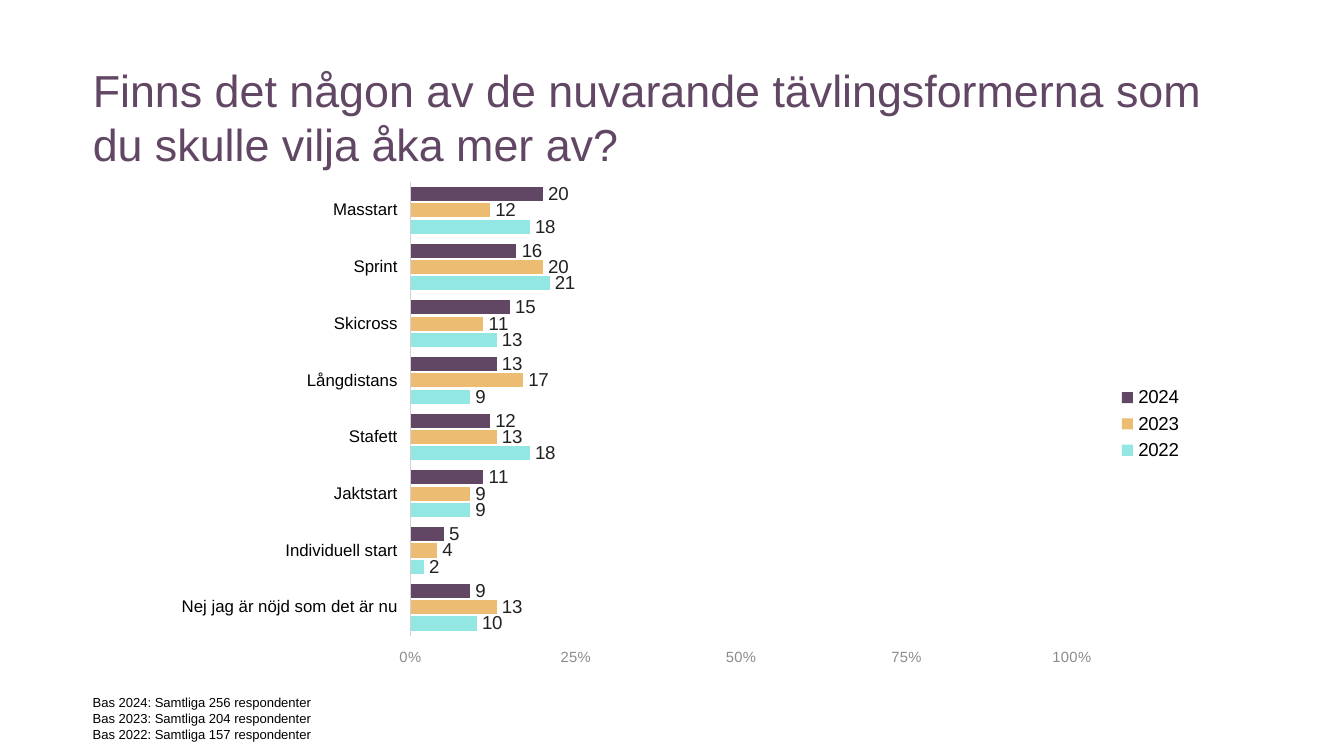
from dataclasses import dataclass

from lxml.etree import SubElement
from pptx import Presentation
from pptx.chart.chart import Chart
from pptx.chart.data import CategoryChartData
from pptx.dml.color import RGBColor
from pptx.enum.chart import (XL_CHART_TYPE, XL_LABEL_POSITION, XL_LEGEND_POSITION,
                             XL_TICK_LABEL_POSITION, XL_TICK_MARK)
from pptx.enum.text import MSO_ANCHOR, PP_ALIGN
from pptx.oxml.ns import qn
from pptx.util import Inches, Pt

FONT = "Arial"
COLORS = {"plum": "624764", "amber": "EBBC71", "aqua": "92E7E2", "label": "212121",
          "black": "000000", "scale": "8C8C8C", "axis": "D1D1D1"}
CATEGORIES = ["Nej jag är nöjd som det är nu", "Individuell start", "Jaktstart", "Stafett",
              "Långdistans", "Skicross", "Sprint", "Masstart"]


@dataclass
class Box:
    left: float
    top: float
    width: float
    height: float

    def lengths(self) -> list:
        return [Inches(value) for value in (self.left, self.top, self.width, self.height)]


@dataclass
class Survey:
    year: str
    respondents: int
    color: str
    shares: tuple


SURVEYS = [
    Survey("2022", 157, "aqua", (10, 2, 9, 18, 9, 13, 21, 18)),
    Survey("2023", 204, "amber", (13, 4, 9, 13, 17, 11, 20, 12)),
    Survey("2024", 256, "plum", (9, 5, 11, 12, 13, 15, 16, 20)),
]
MARGIN = 0.69
TITLE_BOX = Box(MARGIN, 0.46, 8.58, 0.82)
CHART_BOX = Box(1.21, 1.28, 7.69, 3.75)
BASE_BOX = Box(MARGIN, 5.17, 1.8, 0.31)
PLOT_SHARES = {"x": 0.24, "y": 0.02, "w": 0.64, "h": 0.9}


def rgb(name: str) -> RGBColor:
    return RGBColor.from_string(COLORS[name])


def set_font(font, size: float, color: str) -> None:
    font.name = FONT
    font.size = Pt(size)
    font.color.rgb = rgb(color)


def write_lines(shape, lines: list, size: float, color: str, anchor) -> None:
    frame = shape.text_frame
    frame.word_wrap = True
    frame.vertical_anchor = anchor
    frame.margin_left = frame.margin_top = frame.margin_right = frame.margin_bottom = 0
    frame.text = "\n".join(lines)
    for paragraph in frame.paragraphs:
        paragraph.alignment = PP_ALIGN.LEFT
        paragraph.line_spacing = 1.0
        set_font(paragraph.font, size, color)


def place_plot(chart: Chart) -> None:
    plot_area = chart.plots[0]._element.getparent()
    layout = plot_area.find(qn("c:layout"))
    if layout is None:
        layout = SubElement(plot_area, qn("c:layout"))
        plot_area.insert(0, layout)
    manual = SubElement(layout, qn("c:manualLayout"))
    SubElement(manual, qn("c:layoutTarget")).set("val", "inner")
    for side in "xy":
        SubElement(manual, qn(f"c:{side}Mode")).set("val", "edge")
    for side, share in PLOT_SHARES.items():
        SubElement(manual, qn(f"c:{side}")).set("val", str(share))


def format_axis(axis, size: float, color: str) -> None:
    axis.has_major_gridlines = False
    axis.major_tick_mark = axis.minor_tick_mark = XL_TICK_MARK.NONE
    axis.tick_label_position = XL_TICK_LABEL_POSITION.LOW
    set_font(axis.tick_labels.font, size, color)


def add_survey_chart(slide) -> None:
    data = CategoryChartData(number_format="0")
    data.categories = CATEGORIES
    for survey in SURVEYS:
        data.add_series(survey.year, survey.shares)
    chart = slide.shapes.add_chart(XL_CHART_TYPE.BAR_CLUSTERED, *CHART_BOX.lengths(), data).chart
    chart.has_title = False
    set_font(chart.font, 10, "label")
    place_plot(chart)

    format_axis(chart.category_axis, 9, "black")
    chart.category_axis.format.line.color.rgb = rgb("axis")
    chart.category_axis.format.line.width = Pt(0.75)

    scale = chart.value_axis
    format_axis(scale, 7.9, "scale")
    scale.format.line.fill.background()
    scale.minimum_scale, scale.maximum_scale, scale.major_unit = 0, 100, 25
    scale.tick_labels.number_format = "General\\%"
    scale.tick_labels.number_format_is_linked = False

    chart.has_legend = True
    chart.legend.position = XL_LEGEND_POSITION.RIGHT
    chart.legend.include_in_layout = False
    set_font(chart.legend.font, 10, "black")

    plot = chart.plots[0]
    plot.gap_width, plot.overlap = 70, -16
    plot.vary_by_categories = False
    for series, survey in zip(plot.series, SURVEYS):
        series.format.fill.solid()
        series.format.fill.fore_color.rgb = rgb(survey.color)
        labels = series.data_labels
        labels.show_value = True
        labels.position = XL_LABEL_POSITION.OUTSIDE_END
        labels.number_format = "0"
        labels.number_format_is_linked = False
        set_font(labels.font, 10, "label")


def main() -> None:
    presentation = Presentation()
    presentation.slide_width = Inches(10)
    presentation.slide_height = presentation.slide_width * 9 // 16
    slide = presentation.slides.add_slide(presentation.slide_layouts.get_by_name("Title Only"))

    title = slide.shapes.title
    title.left, title.top, title.width, title.height = TITLE_BOX.lengths()
    question = "Finns det någon av de nuvarande tävlingsformerna som du skulle vilja åka mer av?"
    write_lines(title, [question], 24, "plum", MSO_ANCHOR.MIDDLE)

    add_survey_chart(slide)

    bases = [f"Bas {survey.year}: Samtliga {survey.respondents} respondenter"
             for survey in reversed(SURVEYS)]
    base_note = slide.shapes.add_textbox(*BASE_BOX.lengths())
    write_lines(base_note, bases, 7, "black", MSO_ANCHOR.TOP)

    presentation.save("out.pptx")


if __name__ == "__main__":
    main()
